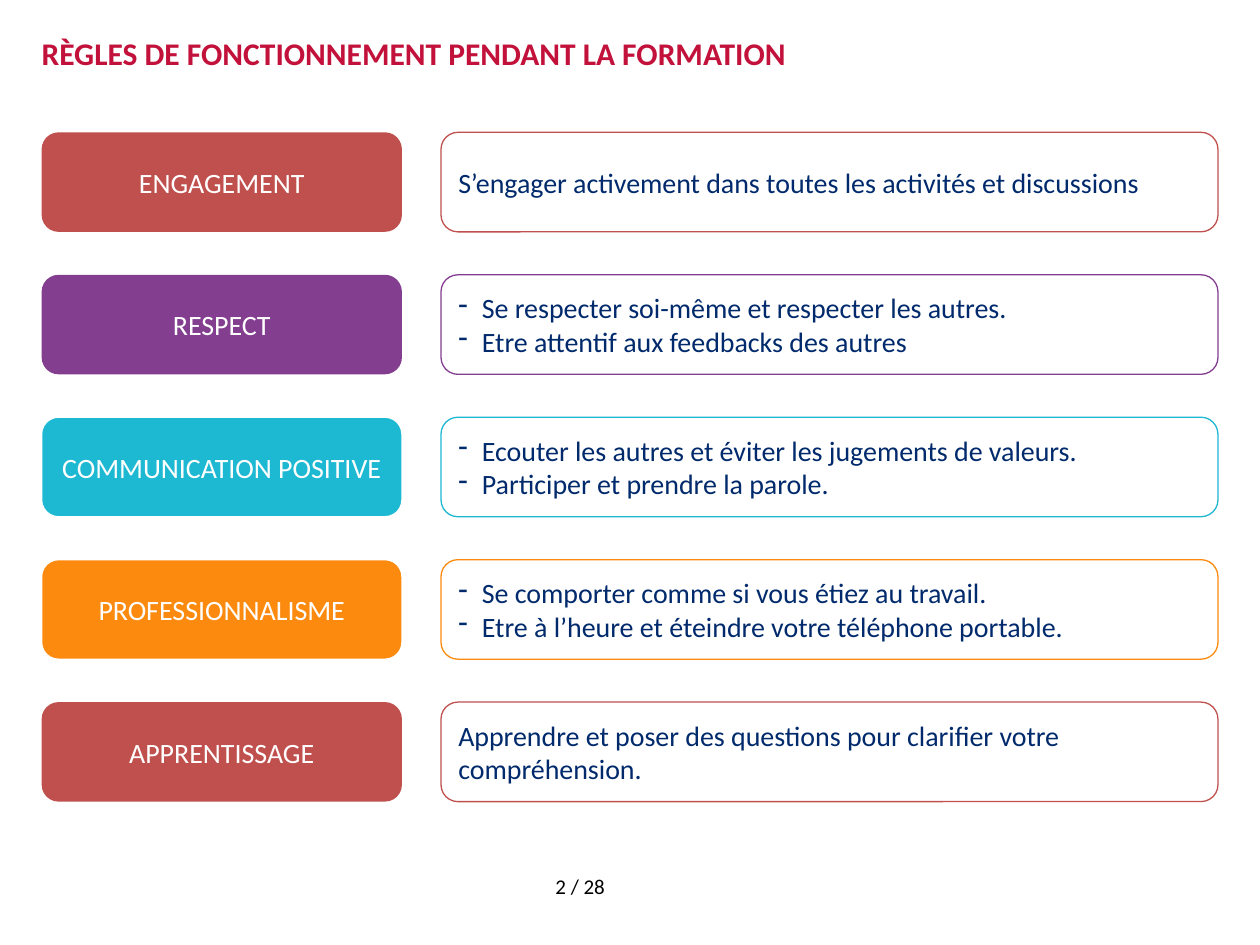
from dataclasses import dataclass
from typing import Optional

from lxml import etree
from pptx import Presentation
from pptx import util as u
from pptx.dml import color
from pptx.enum import shapes, text
from pptx.oxml import ns

FONT = "Calibri"
NAVY = "002A6C"
WHITE = "FFFFFF"
LEFT, TOP, PITCH, HEIGHT = 23.8, 75.6, 81.4, 56.9
LABEL_W, DETAIL_LEFT, DETAIL_W = 205.9, 252, 444
INDENT = 13.5


@dataclass
class Rule:
    label: str
    hue: str
    details: list[str]
    label_line: Optional[str] = None


RULES = [
    Rule("ENGAGEMENT", "C0504D",
         ["S’engager activement dans toutes les activités et discussions"]),
    Rule("RESPECT", "833E90",
         ["Se respecter soi-même et respecter les autres.",
          "Etre attentif aux feedbacks des autres"]),
    Rule("COMMUNICATION POSITIVE", "1DB8D1",
         ["Ecouter les autres et éviter les jugements de valeurs.",
          "Participer et prendre la parole."], WHITE),
    Rule("PROFESSIONNALISME", "FC8A0E",
         ["Se comporter comme si vous étiez au travail.",
          "Etre à l’heure et éteindre votre téléphone portable."], WHITE),
    Rule("APPRENTISSAGE", "C0504D",
         ["Apprendre et poser des questions pour clarifier votre compréhension."]),
]


def rgb(value: str) -> color.RGBColor:
    return color.RGBColor.from_string(value)


def format_runs(p, size: float, hue: str, bold: bool = False) -> None:
    for r in p.runs:
        r.font.name = FONT
        r.font.size = u.Pt(size)
        r.font.bold = bold
        r.font.color.rgb = rgb(hue)


def add_dash(p, hue: str) -> None:
    pPr = p._p.get_or_add_pPr()
    pPr.set("marL", str(u.Pt(INDENT)))
    pPr.set("indent", str(-u.Pt(INDENT)))
    clr = etree.SubElement(pPr, ns.qn("a:buClr"))
    etree.SubElement(clr, ns.qn("a:srgbClr"), val=hue)
    etree.SubElement(pPr, ns.qn("a:buChar"), char="-")


def add_box(s, kind, x: float, y: float, w: float, h: float,
            fill: Optional[str], line: Optional[str]):
    sp = s.shapes.add_shape(kind, u.Pt(x), u.Pt(y), u.Pt(w), u.Pt(h))
    sp.shadow.inherit = False
    if fill:
        sp.fill.solid()
        sp.fill.fore_color.rgb = rgb(fill)
    else:
        sp.fill.background()
    if line:
        sp.line.color.rgb = rgb(line)
        sp.line.width = u.Pt(0.75)
    else:
        sp.line.fill.background()
    return sp


def add_card(s, x: float, y: float, w: float, lines: list[str], hue: str,
             align, fill: Optional[str], line: Optional[str]) -> None:
    sp = add_box(s, shapes.MSO_SHAPE.ROUNDED_RECTANGLE, x, y, w, HEIGHT, fill, line)
    sp.adjustments[0] = 0.17
    tf = sp.text_frame
    tf.word_wrap = True
    tf.vertical_anchor = text.MSO_ANCHOR.MIDDLE
    tf.text = "\n".join(lines)
    for p in tf.paragraphs:
        p.alignment = align
        if len(lines) > 1:
            add_dash(p, hue)
        format_runs(p, 16, hue)


def add_title(s, title: str) -> None:
    sp = add_box(s, shapes.MSO_SHAPE.RECTANGLE, LEFT, 20.9, 672, 54.7, WHITE, None)
    tf = sp.text_frame
    tf.word_wrap = True
    tf.vertical_anchor = text.MSO_ANCHOR.TOP
    tf.margin_left = tf.margin_right = tf.margin_top = tf.margin_bottom = 0
    tf.text = title
    p = tf.paragraphs[0]
    p.alignment = text.PP_ALIGN.JUSTIFY
    p.line_spacing = u.Pt(20)
    p.space_after = u.Pt(12)
    format_runs(p, 18, "C2113A", True)


def add_page_number(s, number: str) -> None:
    sp = s.shapes.add_textbox(u.Pt(310.3), u.Pt(495.4), u.Pt(100), u.Pt(21.6))
    tf = sp.text_frame
    tf.word_wrap = True
    tf.text = number
    format_runs(tf.paragraphs[0], 12, "000000")


def main() -> None:
    prs = Presentation()
    prs.slide_width, prs.slide_height = u.Pt(720), u.Pt(540)
    s = prs.slides.add_slide(prs.slide_layouts[6])
    add_title(s, "RÈGLES DE FONCTIONNEMENT PENDANT LA FORMATION")
    add_page_number(s, "2 / 28")
    for i, rule in enumerate(RULES):
        y = TOP + i * PITCH
        add_card(s, LEFT, y, LABEL_W, [rule.label], WHITE,
                 text.PP_ALIGN.CENTER, rule.hue, rule.label_line)
        add_card(s, DETAIL_LEFT, y, DETAIL_W, rule.details, NAVY,
                 text.PP_ALIGN.LEFT, None, rule.hue)
    prs.save("out.pptx")


if __name__ == "__main__":
    main()
